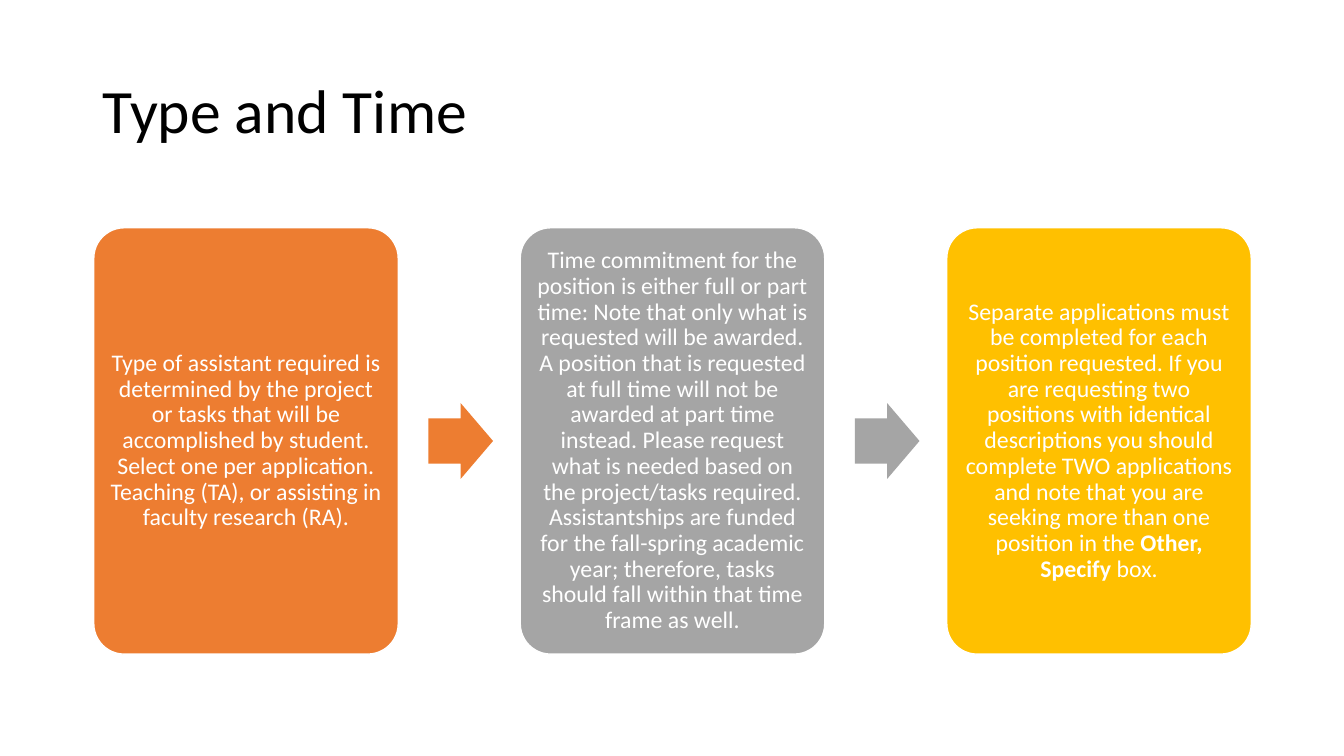
from pptx import Presentation
from pptx.dml.color import RGBColor
from pptx.enum import shapes, text
from pptx.util import Inches, Pt

STEPS = [
    ("ED7D31", [("Type of assistant required is determined by the project or tasks "
                 "that will be accomplished by student. Select one per application. "
                 "Teaching (TA), or assisting in faculty research (RA).", False)]),
    ("A5A5A5", [("Time commitment for the position is either full or part time: Note "
                 "that only what is requested will be awarded. A position that is "
                 "requested at full time will not be awarded at part time instead. "
                 "Please request what is needed based on the project/tasks required. "
                 "Assistantships are funded for the fall-spring academic year; "
                 "therefore, tasks should fall within that time frame as well.", False)]),
    ("FFC000", [("Separate applications must be completed for each position requested. "
                 "If you are requesting two positions with identical descriptions you "
                 "should complete TWO applications and note that you are seeking more "
                 "than one position in the ", False),
                ("Other, Specify", True), (" box.", False)]),
]


def color(code):
    return RGBColor.from_string(code)


def write(shape, runs, size, ink, align, inset=None):
    """Fill a shape with one paragraph made of (words, bold) runs."""
    frame = shape.text_frame
    frame.word_wrap = True
    frame.auto_size = text.MSO_AUTO_SIZE.NONE
    frame.vertical_anchor = text.MSO_ANCHOR.MIDDLE
    if inset is not None:
        frame.margin_left = frame.margin_right = Inches(inset)
        frame.margin_top = frame.margin_bottom = Inches(inset)
    para = frame.paragraphs[0]
    para.alignment = align
    para.line_spacing = 0.9
    for words, bold in runs:
        run = para.add_run()
        run.text = words
        run.font.name = "Calibri"
        run.font.size = Pt(size)
        run.font.bold = bold
        run.font.color.rgb = color(ink)


def block(slide, kind, box, fill, adjust, line=None):
    shape = slide.shapes.add_shape(kind, *map(Inches, box))
    shape.shadow.inherit = False
    shape.fill.solid()
    shape.fill.fore_color.rgb = color(fill)
    for i, value in enumerate(adjust):
        shape.adjustments[i] = value
    if line:
        shape.line.color.rgb = color(line)
        shape.line.width = Pt(1)
    else:
        shape.line.fill.background()
    return shape


def heading(slide, box, words):
    title = slide.shapes.title
    title.left, title.top, title.width, title.height = map(Inches, box)
    write(title, [(words, False)], 44, "000000", text.PP_ALIGN.LEFT)


def process(slide, box, steps):
    """Spread the cards evenly over the box, with an arrow in each gap."""
    left, top, width, height = box
    card, wide, high = 3.02, 0.64, 0.75
    pitch = (width - card) / (len(steps) - 1)
    for i, (fill, runs) in enumerate(steps):
        x = left + i * pitch
        shape = block(slide, shapes.MSO_SHAPE.ROUNDED_RECTANGLE,
                      (x, top, card, height), fill, [0.1], "FFFFFF")
        write(shape, runs, 17, "FFFFFF", text.PP_ALIGN.CENTER, 0.07)
        if i < len(steps) - 1:
            spot = (x + card + 0.3, top + (height - high) / 2, wide, high)
            block(slide, shapes.MSO_SHAPE.RIGHT_ARROW, spot, fill, [0.6, 0.5])


def main():
    deck = Presentation()
    deck.slide_width, deck.slide_height = Inches(13.33), Inches(7.5)
    slide = deck.slides.add_slide(deck.slide_layouts[5])
    heading(slide, (0.92, 0.4, 11.5, 1.45), "Type and Time")
    process(slide, (0.93, 2.26, 11.48, 4.23), STEPS)
    deck.save("out.pptx")


if __name__ == "__main__":
    main()
